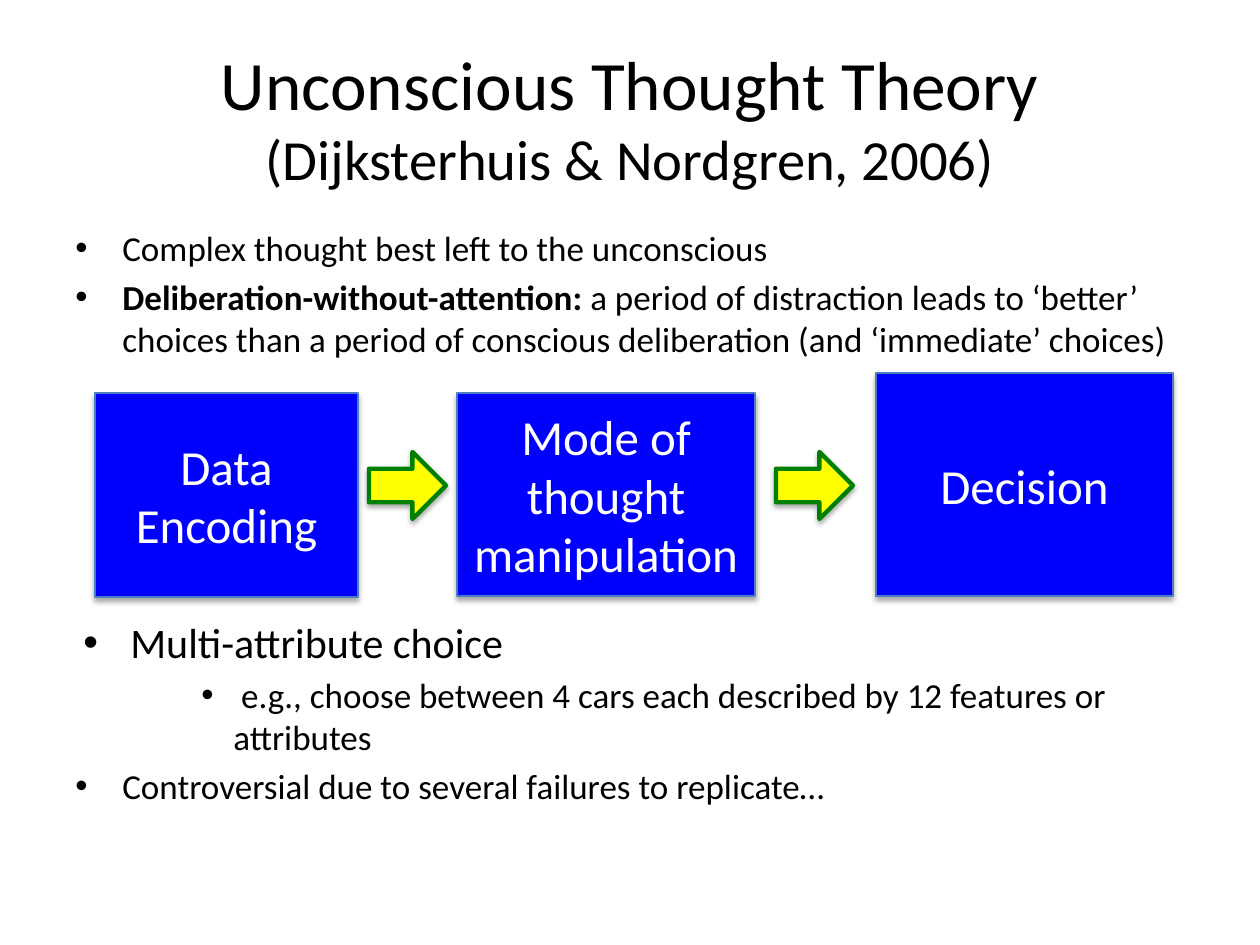
"""Build the Unconscious Thought Theory slide."""
from dataclasses import dataclass

from lxml.etree import SubElement
from pptx import Presentation
from pptx.dml.color import RGBColor
from pptx.enum.shapes import MSO_SHAPE
from pptx.enum.text import MSO_ANCHOR, PP_ALIGN
from pptx.oxml.ns import qn
from pptx.util import Emu, Pt

EMU_PER_PX = 914400 / 126


@dataclass(frozen=True)
class Theme:
    font: str = "Calibri"
    ink: str = "000000"
    step_fill: str = "0000FF"
    step_line: str = "4B7EBC"
    step_ink: str = "FFFFFF"
    arrow_fill: str = "FFFF00"
    arrow_line: str = "008000"
    title: float = 39.6
    citation: float = 32.4
    body: float = 20
    topic: float = 24
    step: float = 28
    step_border: float = 0.75
    arrow_border: float = 2.5


@dataclass(frozen=True)
class Box:
    left: int
    top: int
    width: int
    height: int


@dataclass(frozen=True)
class Step:
    label: str
    box: Box


@dataclass(frozen=True)
class Point:
    text: str
    lead: str = ""
    size: float = 20
    margin: int = 47
    hanging: int = 47
    level: int = 0
    space_before: float = 4


THEME = Theme()
TITLE_BOX = Box(63, 38, 1134, 157)
BODY_BOX = Box(63, 220, 1134, 624)
STEPS = (
    Step("Data Encoding", Box(95, 393, 263, 204)),
    Step("Mode of thought manipulation", Box(457, 393, 298, 203)),
    Step("Decision", Box(876, 373, 297, 223)),
)
ARROWS = tuple(Box(left, 447, 67, 77) for left in (374, 781))
POINTS = (
    Point("Complex thought best left to the unconscious"),
    Point(
        " a period of distraction leads to ‘better’ choices than a period of "
        "conscious deliberation (and ‘immediate’ choices)",
        lead="Deliberation-without-attention:",
    ),
    Point("Multi-attribute choice", size=THEME.topic, margin=55, space_before=147),
    Point(
        " e.g., choose between 4 cars each described by 12 features or attributes",
        margin=158, hanging=32, level=2,
    ),
    Point("Controversial due to several failures to replicate…"),
)


def px(length: int) -> Emu:
    return Emu(round(length * EMU_PER_PX))


def place(box: Box) -> tuple[Emu, Emu, Emu, Emu]:
    return px(box.left), px(box.top), px(box.width), px(box.height)


def style(run, size: float, color: str, bold: bool = False) -> None:
    run.font.name = THEME.font
    run.font.size = Pt(size)
    run.font.bold = bold
    run.font.color.rgb = RGBColor.from_string(color)


def add_bullet(paragraph, margin: int, hanging: int) -> None:
    properties = paragraph._p.get_or_add_pPr()
    properties.set("marL", str(px(margin)))
    properties.set("indent", str(-px(hanging)))
    SubElement(properties, qn("a:buFont"), typeface="Arial")
    SubElement(properties, qn("a:buChar"), char="•")


def add_shadow(shape) -> None:
    shape.shadow.inherit = False
    effects = shape._element.spPr.find(qn("a:effectLst"))
    shadow = SubElement(
        effects, qn("a:outerShdw"), blurRad=str(Pt(3.1)), dist=str(Pt(1.8)),
        dir="5400000", rotWithShape="0",
    )
    color = SubElement(shadow, qn("a:srgbClr"), val=THEME.ink)
    SubElement(color, qn("a:alpha"), val="35000")


def add_block(slide, kind: MSO_SHAPE, box: Box, fill: str, line: str, border: float):
    block = slide.shapes.add_shape(kind, *place(box))
    block.fill.solid()
    block.fill.fore_color.rgb = RGBColor.from_string(fill)
    block.line.color.rgb = RGBColor.from_string(line)
    block.line.width = Pt(border)
    add_shadow(block)
    return block


def add_step(slide, step: Step) -> None:
    block = add_block(slide, MSO_SHAPE.RECTANGLE, step.box,
                      THEME.step_fill, THEME.step_line, THEME.step_border)
    frame = block.text_frame
    frame.text = step.label
    frame.word_wrap = True
    frame.vertical_anchor = MSO_ANCHOR.MIDDLE
    frame.paragraphs[0].alignment = PP_ALIGN.CENTER
    style(frame.paragraphs[0].runs[0], THEME.step, THEME.step_ink)


def add_arrow(slide, box: Box) -> None:
    arrow = add_block(slide, MSO_SHAPE.DOWN_ARROW, box,
                      THEME.arrow_fill, THEME.arrow_line, THEME.arrow_border)
    arrow.rotation = 270


def add_title(slide) -> None:
    frame = slide.shapes.add_textbox(*place(TITLE_BOX)).text_frame
    frame.word_wrap = True
    frame.vertical_anchor = MSO_ANCHOR.MIDDLE
    frame.text = "Unconscious Thought Theory\v(Dijksterhuis & Nordgren, 2006)"
    heading = frame.paragraphs[0]
    heading.alignment = PP_ALIGN.CENTER
    for run, size in zip(heading.runs, (THEME.title, THEME.citation)):
        style(run, size, THEME.ink)


def add_points(slide) -> None:
    frame = slide.shapes.add_textbox(*place(BODY_BOX)).text_frame
    frame.word_wrap = True
    for index, point in enumerate(POINTS):
        paragraph = frame.add_paragraph() if index else frame.paragraphs[0]
        paragraph.level = point.level
        paragraph.space_before = Pt(point.space_before)
        add_bullet(paragraph, point.margin, point.hanging)
        for text, bold in ((point.lead, True), (point.text, False)):
            if text:
                run = paragraph.add_run()
                run.text = text
                style(run, point.size, THEME.ink, bold)


def main() -> None:
    presentation = Presentation()
    presentation.slide_width, presentation.slide_height = px(1260), px(945)
    slide = presentation.slides.add_slide(presentation.slide_layouts[6])
    add_title(slide)
    add_points(slide)
    for step in STEPS:
        add_step(slide, step)
    for arrow in ARROWS:
        add_arrow(slide, arrow)
    presentation.save("out.pptx")


if __name__ == "__main__":
    main()
